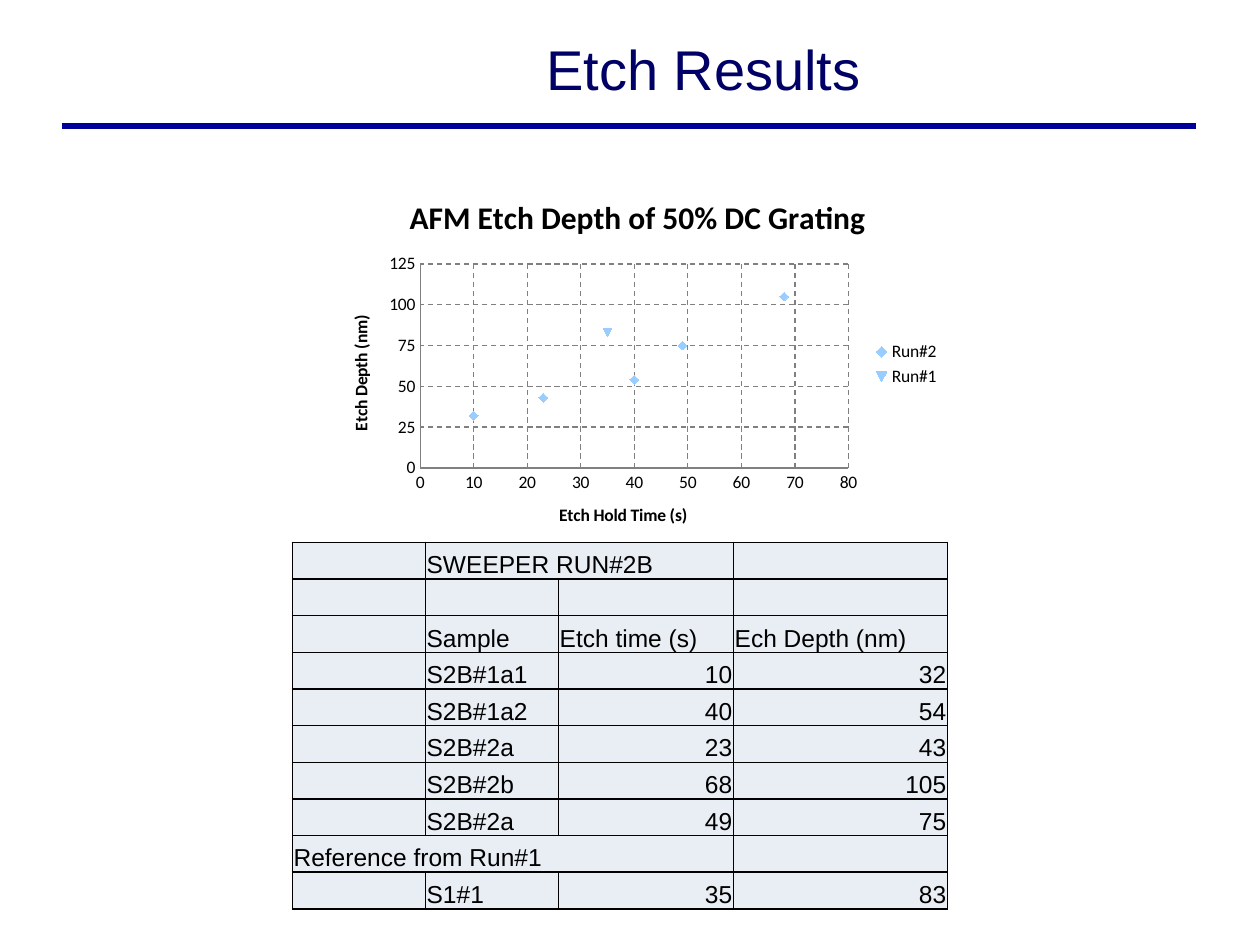
from dataclasses import dataclass

from lxml.etree import SubElement
from pptx import Presentation
from pptx.chart.data import XyChartData
from pptx.dml.color import RGBColor
from pptx.enum.chart import XL_CHART_TYPE as ChartType, XL_LEGEND_POSITION as LegendSide
from pptx.enum.chart import XL_MARKER_STYLE as Marker, XL_TICK_MARK as Tick
from pptx.enum.dml import MSO_LINE_DASH_STYLE as Dash
from pptx.enum.shapes import MSO_CONNECTOR as Connector
from pptx.enum.text import MSO_ANCHOR as Anchor, PP_ALIGN as Align
from pptx.oxml import parse_xml
from pptx.oxml.ns import nsdecls, qn
from pptx.util import Inches, Pt

COLUMNS, ROWS = 100, 75  # layout grid of the slide


@dataclass(frozen=True)
class Theme:
    heading: str = "000066"
    rule: str = "000099"
    ink: str = "000000"
    cell: str = "E9EDF4"
    marker: str = "99CCFF"
    grid: str = "808080"
    body_font: str = "Arial"
    chart_font: str = "Calibri"
    heading_size: float = 32
    table_size: float = 14
    chart_title_size: float = 18
    chart_size: float = 10


def rgb(code):
    return RGBColor.from_string(code)


def write(frame, text, font, size, color, bold=False, align=None):
    """Put one formatted paragraph in a text frame, even when it is empty."""
    paragraph = frame.paragraphs[0]
    if align is not None:
        paragraph.alignment = align
    if not text:
        SubElement(paragraph._p, qn("a:endParaRPr"), sz=str(int(size * 100)))
        return
    run = paragraph.add_run()
    run.text = text
    run.font.name, run.font.size, run.font.bold = font, Pt(size), bold
    run.font.color.rgb = rgb(color)


class SlideBuilder:
    def __init__(self, deck, theme):
        self.theme = theme
        self.unit_x = deck.slide_width / COLUMNS
        self.unit_y = deck.slide_height / ROWS
        self.slide = deck.slides.add_slide(deck.slide_layouts[5])

    def box(self, left, top, width, height):
        return (round(left * self.unit_x), round(top * self.unit_y),
                round(width * self.unit_x), round(height * self.unit_y))

    def title(self, text, *place):
        heading = self.slide.shapes.title
        heading.left, heading.top, heading.width, heading.height = self.box(*place)
        heading.text_frame.vertical_anchor = Anchor.MIDDLE
        write(heading.text_frame, text, self.theme.body_font, self.theme.heading_size,
              self.theme.heading, align=Align.CENTER)

    def rule(self, left, top, width, weight):
        x, y, length, _ = self.box(left, top, width, 0)
        line = self.slide.shapes.add_connector(Connector.STRAIGHT, x, y, x + length, y)
        line.line.color.rgb = rgb(self.theme.rule)
        line.line.width = Pt(weight)
        SubElement(line._element.spPr, qn("a:effectLst"))

    def scatter(self, title, x_axis, y_axis, runs, plot, *place):
        theme = self.theme
        data = XyChartData()
        for name, points, *_ in runs:
            series = data.add_series(name)
            for x, y in points:
                series.add_data_point(x, y)
        chart = self.slide.shapes.add_chart(
            ChartType.XY_SCATTER, *self.box(*place), data).chart
        chart.font.name, chart.font.size = theme.chart_font, Pt(theme.chart_size)
        chart.font.color.rgb = rgb(theme.ink)
        chart.has_title = True
        write(chart.chart_title.text_frame, title, theme.chart_font,
              theme.chart_title_size, theme.ink, bold=True)
        chart.has_legend = True
        chart.legend.position = LegendSide.RIGHT
        chart.legend.include_in_layout = False
        chart.plots[0].vary_by_categories = False

        # Axes and dashed grid
        for axis, (label, top, step) in ((chart.category_axis, x_axis),
                                         (chart.value_axis, y_axis)):
            write(axis.axis_title.text_frame, label, theme.chart_font,
                  theme.chart_size, theme.ink, bold=True)
            axis.minimum_scale, axis.maximum_scale, axis.major_unit = 0, top, step
            axis.major_tick_mark = axis.minor_tick_mark = Tick.NONE
            axis.has_major_gridlines = True
            gridline = axis.major_gridlines.format.line
            gridline.dash_style = Dash.DASH
            for line in (axis.format.line, gridline):
                line.color.rgb = rgb(theme.grid)
                line.width = Pt(0.75)

        # Markers without joining lines; the plotting order follows the run number
        for series, (_, _, style, size, order) in zip(list(chart.plots[0].series), runs):
            series.smooth = False
            series.format.line.fill.background()
            series.marker.style, series.marker.size = style, size
            series.marker.format.fill.solid()
            series.marker.format.fill.fore_color.rgb = rgb(theme.marker)
            series.marker.format.line.fill.background()
            series._element.find(qn("c:order")).set("val", str(order))

        # Inner plot area, in percent of the chart
        area = chart._chartSpace.chart.plotArea
        for old in area.findall(qn("c:layout")):
            area.remove(old)
        layout = parse_xml(f'<c:layout {nsdecls("c")}><c:manualLayout/></c:layout>')
        settings = [("layoutTarget", "inner"), ("xMode", "edge"), ("yMode", "edge"),
                    *((tag, share / 100) for tag, share in zip("xywh", plot))]
        for tag, value in settings:
            SubElement(layout[0], qn(f"c:{tag}"), val=str(value))
        area.insert(0, layout)

    def table(self, rows, merges, widths, row_height, left, top):
        place = self.box(left, top, sum(widths), row_height * len(rows))
        grid = self.slide.shapes.add_table(len(rows), len(widths), *place).table
        grid.first_row = grid.horz_banding = False
        for column, width in zip(grid.columns, widths):
            column.width = round(width * self.unit_x)
        for r, row in enumerate(rows):
            grid.rows[r].height = round(row_height * self.unit_y)
            for c, value in enumerate(row):
                self.cell(grid.cell(r, c), value)
        for row, first, last in merges:
            grid.cell(row, first).merge(grid.cell(row, last))

    def cell(self, cell, value):
        theme = self.theme
        cell.margin_left = cell.margin_right = cell.margin_top = Inches(0.01)
        cell.margin_bottom = 0
        cell.vertical_anchor = Anchor.BOTTOM
        write(cell.text_frame, str(value), theme.body_font, theme.table_size, theme.ink,
              align=Align.RIGHT if isinstance(value, int) else Align.LEFT)
        properties = cell._tc.get_or_add_tcPr()
        for side in ("lnL", "lnR", "lnT", "lnB"):
            border = SubElement(properties, qn(f"a:{side}"), w=str(Pt(1)))
            SubElement(SubElement(border, qn("a:solidFill")), qn("a:srgbClr"), val=theme.ink)
        cell.fill.solid()
        cell.fill.fore_color.rgb = rgb(theme.cell)


def main():
    deck = Presentation()
    deck.slide_width, deck.slide_height = Inches(10), Inches(7.5)
    page = SlideBuilder(deck, Theme())

    # Heading
    page.title("Etch Results", 16.7, 0.8, 78.3, 9.2)
    page.rule(4.9, 10, 90, weight=3)

    # Measurements shared by chart and table
    sweep = [("S2B#1a1", 10, 32), ("S2B#1a2", 40, 54), ("S2B#2a", 23, 43),
             ("S2B#2b", 68, 105), ("S2B#2a", 49, 75)]
    reference = ("S1#1", 35, 83)

    # Etch depth chart
    runs = [("Run#2", [sample[1:] for sample in sweep], Marker.DIAMOND, 5, 1),
            ("Run#1", [reference[1:]], Marker.AUTOMATIC, 5, 0)]
    page.scatter("AFM Etch Depth of 50% DC Grating",
                 ("Etch Hold Time (s)", 80, 10), ("Etch Depth (nm)", 125, 25),
                 runs, (15.5, 23.5, 68, 54), 25.6, 13.9, 50, 30)

    # Sample table
    rows = [("", "SWEEPER RUN#2B", "", ""), ("",) * 4,
            ("", "Sample", "Etch time (s)", "Ech Depth (nm)"),
            *[("", *sample) for sample in sweep],
            ("Reference from Run#1", "", "", ""), ("", *reference)]
    page.table(rows, [(0, 1, 2), (8, 0, 2)], (10.56, 10.56, 13.89, 16.99), 2.91, 23.2, 43.04)

    deck.save("out.pptx")


if __name__ == "__main__":
    main()
